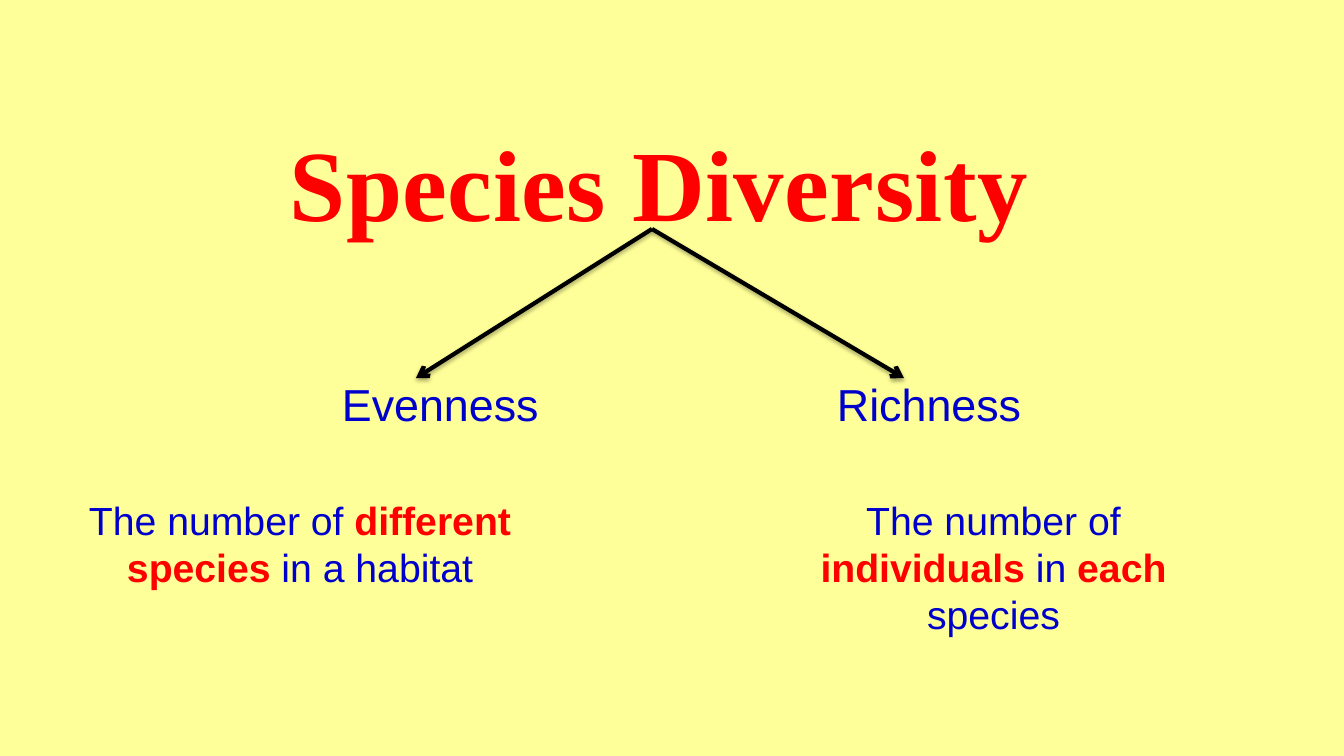
import pptx
import pptx.util
import pptx.dml.color
import pptx.enum.shapes
import pptx.enum.text
import pptx.oxml
import pptx.oxml.ns

PX = 914400 / 100.8
YELLOW = pptx.dml.color.RGBColor(0xFF, 0xFF, 0x99)
RED = pptx.dml.color.RGBColor(0xFF, 0x00, 0x00)
BLUE = pptx.dml.color.RGBColor(0x00, 0x00, 0xCC)
BLACK = pptx.dml.color.RGBColor(0x00, 0x00, 0x00)
CENTER = pptx.enum.text.PP_ALIGN.CENTER
SHADOW = (
    f'<a:effectLst {pptx.oxml.ns.nsdecls("a")}>'
    '<a:outerShdw blurRad="40000" dist="23000" dir="5400000" rotWithShape="0">'
    '<a:srgbClr val="000000"><a:alpha val="35000"/></a:srgbClr>'
    '</a:outerShdw></a:effectLst>'
)
ARROWHEAD = f'<a:tailEnd {pptx.oxml.ns.nsdecls("a")} type="arrow"/>'


def px(*lengths):
    return [round(length * PX) for length in lengths]


def add_text(box, runs, size, font_name="Arial", align=None):
    frame = slide.shapes.add_textbox(*px(*box)).text_frame
    frame.word_wrap = True
    paragraph = frame.paragraphs[0]
    paragraph.alignment = align
    paragraph.font.size = pptx.util.Pt(size)
    paragraph.font.name = font_name
    for text, emphasized in runs:
        run = paragraph.add_run()
        run.text = text
        run.font.bold = emphasized
        run.font.color.rgb = RED if emphasized else BLUE
    return frame


presentation = pptx.Presentation()
presentation.slide_width, presentation.slide_height = px(1344, 756)
slide = presentation.slides.add_slide(presentation.slide_layouts[6])
slide.background.fill.solid()
slide.background.fill.fore_color.rgb = YELLOW

title = add_text((276, 116, 767, 132), [("Species Diversity", True)], 72,
                 "Times New Roman", CENTER)
title.word_wrap = False
title.paragraphs[0].runs[0].font._element.set("spc", "40")

for arrow_tip in (416, 904):
    arrow = slide.shapes.add_connector(
        pptx.enum.shapes.MSO_CONNECTOR.STRAIGHT, *px(652, 229, arrow_tip, 378))
    arrow.line.color.rgb = BLACK
    arrow.line.width = pptx.util.Pt(3)
    arrow.line._get_or_add_ln().append(pptx.oxml.parse_xml(ARROWHEAD))
    arrow._element.spPr.append(pptx.oxml.parse_xml(SHADOW))

for component, left in (("Evenness", 332), ("Richness", 827)):
    add_text((left, 372, 258, 62), [(component, False)], 32)

definitions = [
    (34, 532, [("The number of ", False), ("different species ", True),
               ("in a habitat", False)]),
    (755, 477, [("The number of ", False), ("individuals", True), (" in ", False),
                ("each", True), (" species", False)]),
]
for left, width, runs in definitions:
    add_text((left, 491, width, 155), runs, 28, align=CENTER)

presentation.save("out.pptx")
